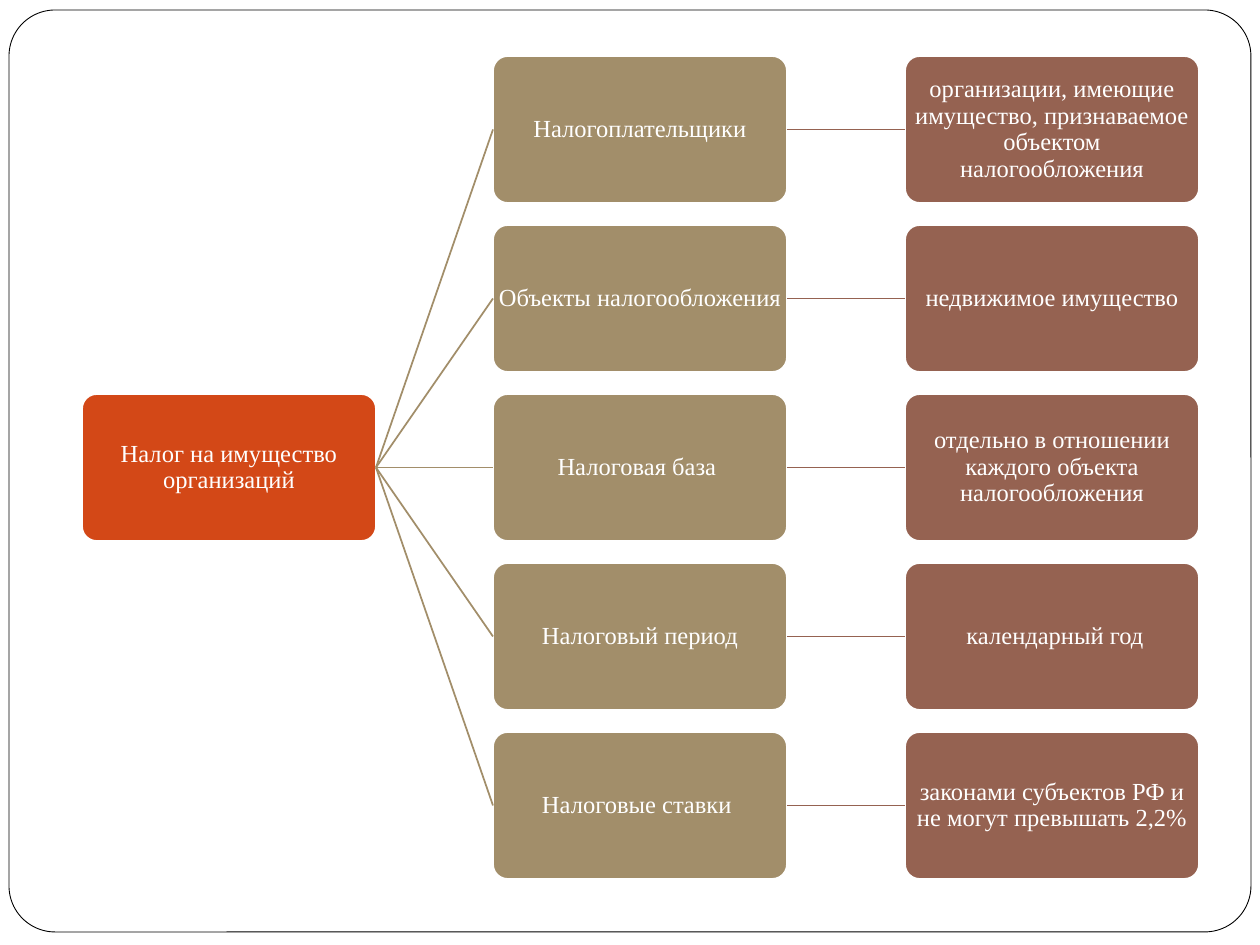
from dataclasses import dataclass

from lxml import etree
from pptx import Presentation
from pptx.dml.color import RGBColor
from pptx.enum.shapes import MSO_CONNECTOR, MSO_SHAPE
from pptx.enum.text import MSO_ANCHOR, PP_ALIGN
from pptx.oxml.ns import qn
from pptx.util import Emu, Pt

ROUNDED = MSO_SHAPE.ROUNDED_RECTANGLE
STRAIGHT = MSO_CONNECTOR.STRAIGHT
MIDDLE = MSO_ANCHOR.MIDDLE
CENTER = PP_ALIGN.CENTER
LEFT_SIDE, RIGHT_SIDE = 1, 3

PX_PER_INCH = 126
COLORS = {
    "white": "FFFFFF",
    "black": "000000",
    "tax": "D34817",
    "element": "A28E6A",
    "detail": "956251",
}
FONT = "Times New Roman"

# Tree grid, in px
BOX_WIDTH, BOX_HEIGHT = 294, 147
TAX_LEFT, ELEMENT_LEFT, DETAIL_LEFT = 82, 493, 905
FIRST_TOP, ROW_STEP = 56, 169
TEXT_MARGIN = 1


@dataclass
class Box:
    text: str
    left: int
    row: int
    color: str


TAX = Box("Налог на имущество организаций", TAX_LEFT, 2, "tax")
ELEMENTS = [
    ("Налогоплательщики",
     "организации, имеющие имущество, признаваемое объектом налогообложения"),
    ("Объекты налогообложения ", "недвижимое имущество"),
    ("Налоговая база ", "отдельно в отношении каждого объекта налогообложения"),
    ("Налоговый период", " календарный год"),
    ("Налоговые ставки ", "законами субъектов РФ и не могут превышать 2,2%"),
]


def px(value: int) -> Emu:
    return Emu(round(value * 914400 / PX_PER_INCH))


def rgb(name: str) -> RGBColor:
    return RGBColor.from_string(COLORS[name])


def add_rounded(slide, left: int, top: int, width: int, height: int,
                corner: float, fill: str, line: str, line_width: float):
    shape = slide.shapes.add_shape(ROUNDED, px(left), px(top), px(width), px(height))
    shape.shadow.inherit = False
    shape.adjustments[0] = corner
    shape.fill.solid()
    shape.fill.fore_color.rgb = rgb(fill)
    shape.line.color.rgb = rgb(line)
    shape.line.width = Pt(line_width)
    return shape


def add_box(slide, box: Box):
    shape = add_rounded(slide, box.left, FIRST_TOP + box.row * ROW_STEP,
                        BOX_WIDTH, BOX_HEIGHT, 0.1, box.color, "white", 1)
    text_frame = shape.text_frame
    text_frame.word_wrap = True
    text_frame.vertical_anchor = MIDDLE
    text_frame.margin_left = text_frame.margin_right = px(TEXT_MARGIN)
    text_frame.margin_top = text_frame.margin_bottom = px(TEXT_MARGIN)
    text_frame.text = box.text
    paragraph = text_frame.paragraphs[0]
    paragraph.alignment = CENTER
    paragraph.line_spacing = 0.9
    font = paragraph.runs[0].font
    font.name = FONT
    font.size = Pt(14)
    font.color.rgb = rgb("white")
    return shape


def add_link(slide, parent, child, color: str) -> None:
    connector = slide.shapes.add_connector(STRAIGHT, 0, 0, 0, 0)
    connector.begin_connect(parent, RIGHT_SIDE)
    connector.end_connect(child, LEFT_SIDE)
    connector.line.color.rgb = rgb(color)
    connector.line.width = Pt(1)
    etree.SubElement(connector._element.spPr, qn("a:effectLst"))


def main() -> None:
    presentation = Presentation()
    presentation.slide_width = px(1260)
    presentation.slide_height = px(945)
    slide = presentation.slides.add_slide(presentation.slide_layouts[6])

    # Page frame
    add_rounded(slide, 9, 10, 1242, 922, 0.05, "white", "black", 0.5)

    # Tax, its elements and their details
    tax = add_box(slide, TAX)
    for row, (element_text, detail_text) in enumerate(ELEMENTS):
        element = add_box(slide, Box(element_text, ELEMENT_LEFT, row, "element"))
        detail = add_box(slide, Box(detail_text, DETAIL_LEFT, row, "detail"))
        add_link(slide, tax, element, "element")
        add_link(slide, element, detail, "detail")

    presentation.save("out.pptx")


if __name__ == "__main__":
    main()
